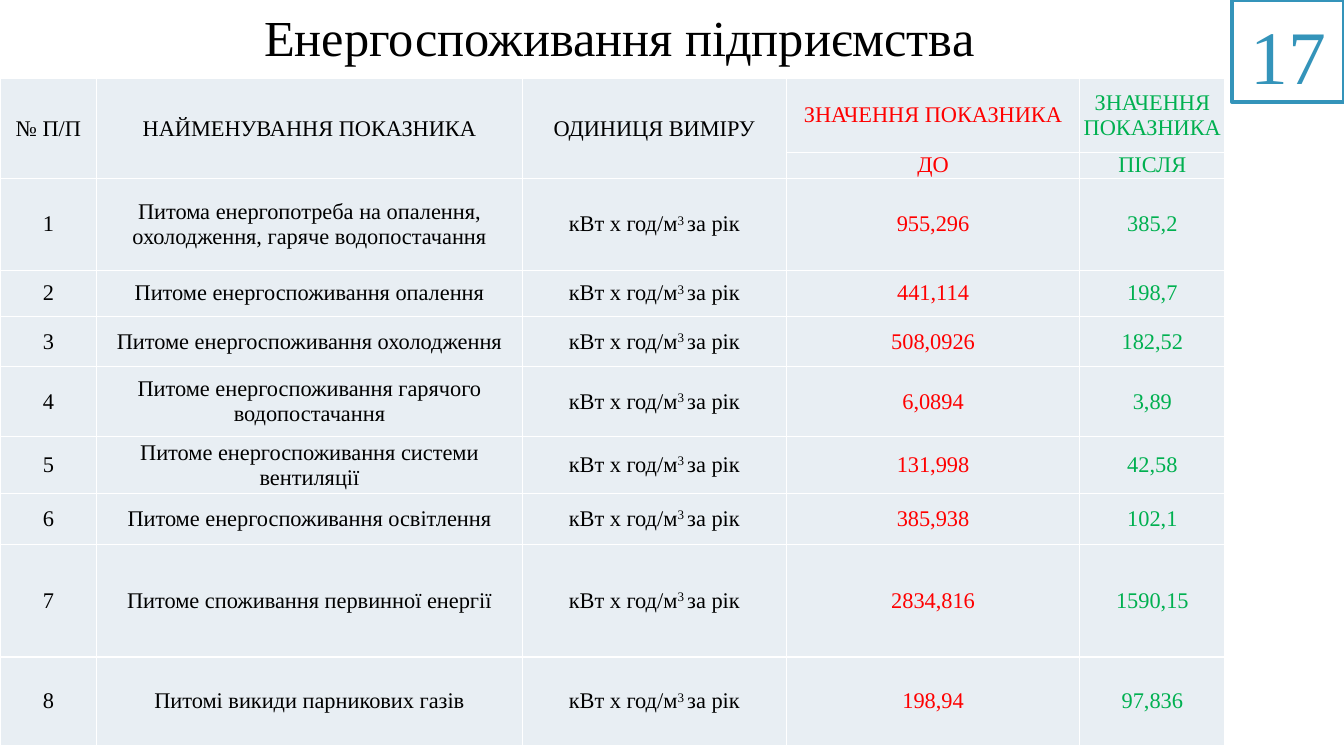
"""Build the slide comparing energy indicators of an enterprise before and after."""
from dataclasses import dataclass
from typing import Any

from lxml import etree
from pptx import Presentation
from pptx.dml.color import RGBColor
from pptx.enum.shapes import MSO_SHAPE
from pptx.enum.text import MSO_ANCHOR, MSO_AUTO_SIZE, PP_ALIGN
from pptx.oxml.ns import qn
from pptx.util import Inches, Pt

CENTER = PP_ALIGN.CENTER
MIDDLE = MSO_ANCHOR.MIDDLE
TOP = MSO_ANCHOR.TOP
NO_AUTOFIT = MSO_AUTO_SIZE.NONE
RECTANGLE = MSO_SHAPE.RECTANGLE
TITLE_ONLY = 5


@dataclass(frozen=True)
class Theme:
    font: str = "Times New Roman"
    text: str = "000000"
    before: str = "FF0000"
    after: str = "00B050"
    accent: str = "3494BA"
    cell: str = "E8EEF3"
    border: str = "FFFFFF"
    title_size: int = 36
    number_size: int = 54
    table_size: int = 16


@dataclass(frozen=True)
class Indicator:
    name: str
    before: str
    after: str
    height: float


@dataclass(frozen=True)
class Span:
    text: str
    baseline: int = 0


THEME = Theme()
COLUMN_WIDTHS = (0.96, 4.22, 2.62, 2.91, 1.44)
COLUMN_COLORS = (THEME.text, THEME.text, THEME.text, THEME.before, THEME.after)
HEADER_HEIGHTS = (0.73, 0.26)
HEADERS = (
    ("№ П/П", "НАЙМЕНУВАННЯ ПОКАЗНИКА", "ОДИНИЦЯ ВИМІРУ",
     "ЗНАЧЕННЯ ПОКАЗНИКА", "ЗНАЧЕННЯ ПОКАЗНИКА"),
    ("", "", "", "ДО", "ПІСЛЯ"),
)
MERGED_HEADERS = 3
UNIT = (Span("кВт х год/м"), Span("3 ", 30000), Span("за рік"))
INDICATORS = (
    Indicator("Питома енергопотреба на опалення, охолодження, гаряче водопостачання",
              "955,296", "385,2", 0.91),
    Indicator("Питоме енергоспоживання опалення", "441,114", "198,7", 0.46),
    Indicator("Питоме енергоспоживання охолодження", "508,0926", "182,52", 0.5),
    Indicator("Питоме енергоспоживання гарячого водопостачання", "6,0894", "3,89", 0.69),
    Indicator("Питоме енергоспоживання системи вентиляції", "131,998", "42,58", 0.57),
    Indicator("Питоме енергоспоживання освітлення", "385,938", "102,1", 0.5),
    Indicator("Питоме споживання первинної енергії", "2834,816", "1590,15", 1.12),
    Indicator("Питомі викиди парникових газів", "198,94", "97,836", 0.88),
)


def set_values(target: Any, values: dict[str, Any]) -> None:
    """Set every named attribute on the target."""
    for name, value in values.items():
        setattr(target, name, value)


def write_para(para: Any, spans: tuple[Span, ...], size: int, color: str) -> None:
    """Write centred spans into a paragraph."""
    para.alignment = CENTER
    for span in spans:
        run = para.add_run()
        run.text = span.text
        set_values(run.font, {"name": THEME.font, "size": Pt(size), "bold": False})
        run.font.color.rgb = RGBColor.from_string(color)
        if span.baseline:
            run.font._element.set("baseline", str(span.baseline))


def add_borders(cell: Any) -> None:
    """Draw a thin line on all four sides of a cell."""
    properties = cell._tc.get_or_add_tcPr()
    for side in ("a:lnL", "a:lnR", "a:lnT", "a:lnB"):
        line = etree.SubElement(properties, qn(side), w=str(Pt(1)))
        fill = etree.SubElement(line, qn("a:solidFill"))
        etree.SubElement(fill, qn("a:srgbClr"), val=THEME.border)


def fill_cell(cell: Any, spans: tuple[Span, ...], color: str) -> None:
    """Format one table cell and write its text."""
    set_values(cell, {"margin_left": 0, "margin_right": 0, "margin_top": 0,
                      "margin_bottom": 0, "vertical_anchor": MIDDLE})
    add_borders(cell)
    cell.fill.solid()
    cell.fill.fore_color.rgb = RGBColor.from_string(THEME.cell)
    write_para(cell.text_frame.paragraphs[0], spans, THEME.table_size, color)


def add_number(page: Any) -> None:
    """Add the framed page number in the corner."""
    box = page.shapes.add_shape(RECTANGLE, Inches(12.22), Inches(0), Inches(1.11), Inches(1.01))
    box.shadow.inherit = False
    box.fill.background()
    box.line.color.rgb = RGBColor.from_string(THEME.accent)
    box.line.width = Pt(3)
    set_values(box.text_frame, {"word_wrap": True, "vertical_anchor": MIDDLE})
    para = box.text_frame.paragraphs[0]
    para.line_spacing = 1.07
    write_para(para, (Span("17"),), THEME.number_size, THEME.accent)


def add_title(page: Any) -> None:
    """Place and format the slide title."""
    title = page.shapes.title
    set_values(title, {"left": Inches(0.8), "top": Inches(-0.03),
                       "width": Inches(10.69), "height": Inches(0.71)})
    set_values(title.text_frame, {"word_wrap": True, "auto_size": NO_AUTOFIT,
                                  "vertical_anchor": TOP})
    para = title.text_frame.paragraphs[0]
    set_values(para, {"line_spacing": 1.07, "space_before": Pt(0), "space_after": Pt(8)})
    write_para(para, (Span("Енергоспоживання підприємства"),), THEME.title_size, THEME.text)


def add_indicator_table(page: Any) -> None:
    """Add the table of indicators with its two-row header."""
    heights = HEADER_HEIGHTS + tuple(item.height for item in INDICATORS)
    rows = [tuple((Span(text),) if text else () for text in header) for header in HEADERS]
    for number, item in enumerate(INDICATORS, 1):
        rows.append(((Span(str(number)),), (Span(item.name),), UNIT,
                     (Span(item.before),), (Span(item.after),)))
    table = page.shapes.add_table(
        len(rows), len(COLUMN_WIDTHS), Inches(0), Inches(0.78),
        Inches(sum(COLUMN_WIDTHS)), Inches(sum(heights))).table
    set_values(table, {"first_row": False, "horz_banding": False})
    for column, width in zip(table.columns, COLUMN_WIDTHS):
        column.width = Inches(width)
    for row, height, contents in zip(table.rows, heights, rows):
        row.height = Inches(height)
        for cell, spans, color in zip(row.cells, contents, COLUMN_COLORS):
            fill_cell(cell, spans, color)
    for index in range(MERGED_HEADERS):
        table.cell(0, index).merge(table.cell(1, index))


def main() -> None:
    """Create the deck and save it."""
    deck = Presentation()
    set_values(deck, {"slide_width": Inches(13.33), "slide_height": Inches(7.5)})
    page = deck.slides.add_slide(deck.slide_layouts[TITLE_ONLY])
    add_number(page)
    add_title(page)
    add_indicator_table(page)
    deck.save("out.pptx")


if __name__ == "__main__":
    main()
